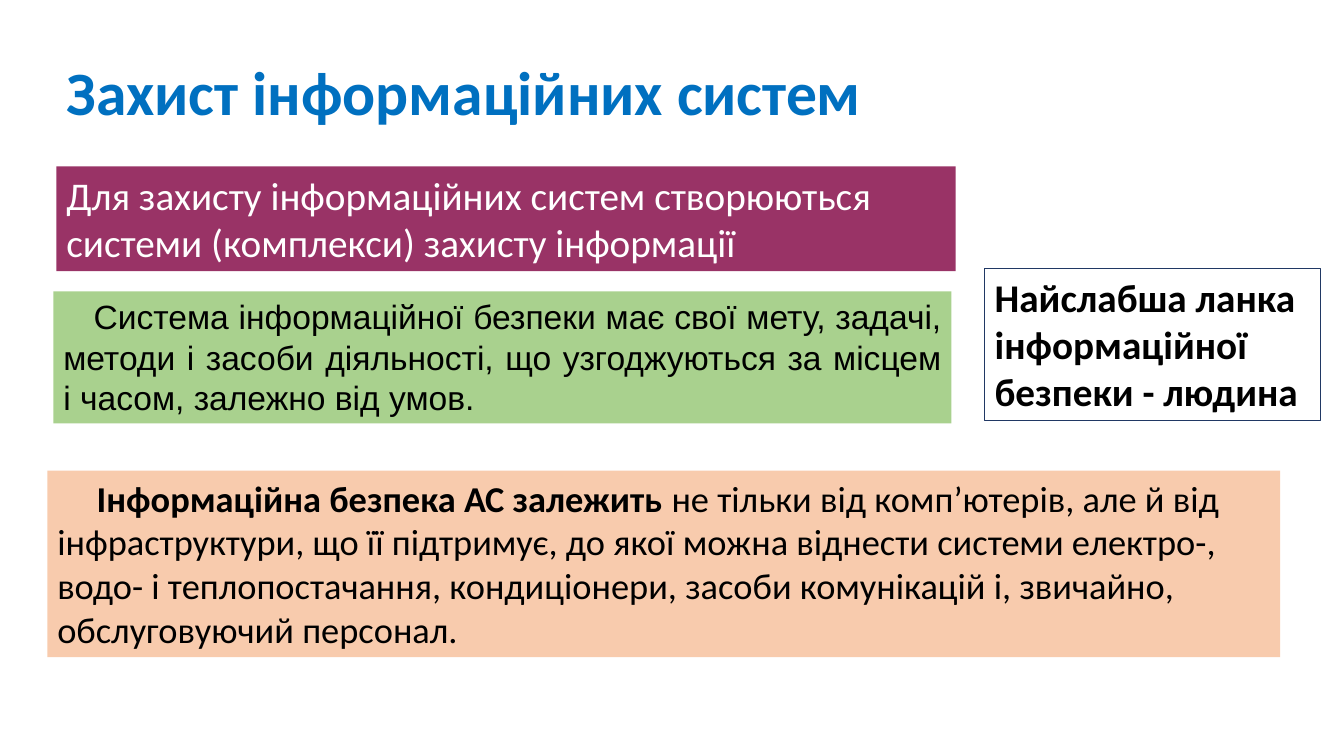
import pptx
import pptx.util
import pptx.dml.color
import pptx.enum.shapes
import pptx.enum.text
from dataclasses import dataclass

Pt = pptx.util.Pt
Align = pptx.enum.text.PP_ALIGN
Anchor = pptx.enum.text.MSO_ANCHOR
Fit = pptx.enum.text.MSO_AUTO_SIZE


@dataclass(frozen=True)
class Theme:
    font: str = "Calibri"
    alt: str = "Arial"
    blue: str = "0070C0"
    navy: str = "203864"
    plum: str = "993366"
    green: str = "A9D18E"
    peach: str = "F8CBAD"
    black: str = "000000"
    white: str = "FFFFFF"
    head: int = 44
    large: int = 28
    body: int = 26
    small: int = 24


theme = Theme()
title = "Захист інформаційних систем"
title_at = (40.32, 17.28, 850.32, 78.48)

boxes = [
    dict(at=(703.44, 191.52, 239.76, 108.72), line=theme.navy, size=theme.large,
         runs=[("Найслабша ланка інформаційної безпеки - людина", True)]),
    dict(at=(33.84, 336.24, 880.56, 133.2), fill=theme.peach, size=theme.body, indent=28.08,
         runs=[("Інформаційна безпека АС залежить ", True),
               ("не тільки від комп’ютерів, але й від інфраструктури, що її підтримує, "
                "до якої можна віднести системи електро-, водо- і теплопостачання, "
                "кондиціонери, засоби комунікацій і, звичайно, обслуговуючий персонал.", False)]),
    dict(at=(40.32, 118.8, 642.24, 74.88), fill=theme.plum, size=theme.large, color=theme.white,
         runs=[("Для захисту інформаційних систем створюються "
                "системи (комплекси) захисту інформації", False)]),
    dict(at=(38.16, 208.08, 641.52, 94.32), fill=theme.green, size=theme.small,
         font=theme.alt, align=Align.JUSTIFY, indent=21.6,
         runs=[("Система інформаційної безпеки має свої мету, задачі, методи і засоби "
                "діяльності, що узгоджуються за місцем і часом, залежно від умов.", False)]),
]


def rgb(code):
    return pptx.dml.color.RGBColor.from_string(code)


def style(run, size, color, bold, font=theme.font):
    run.font.name = font
    run.font.size = Pt(size)
    run.font.bold = bold
    run.font.color.rgb = rgb(color)


def add_head(slide):
    head = slide.shapes.title
    head.left, head.top, head.width, head.height = map(Pt, title_at)
    frame = head.text_frame
    frame.text = title
    frame.word_wrap = True
    frame.auto_size = Fit.NONE
    frame.vertical_anchor = Anchor.BOTTOM
    para = frame.paragraphs[0]
    para.alignment = Align.LEFT
    para.line_spacing = 0.9
    style(para.runs[0], theme.head, theme.blue, True)


def add_box(slide, at, runs, size, fill=None, line=None, color=theme.black,
            font=theme.font, align=Align.LEFT, indent=0):
    kind = pptx.enum.shapes.MSO_SHAPE.RECTANGLE
    box = slide.shapes.add_shape(kind, *map(Pt, at))
    box.shadow.inherit = False
    if fill:
        box.fill.solid()
        box.fill.fore_color.rgb = rgb(fill)
    else:
        box.fill.background()
    if line:
        box.line.color.rgb = rgb(line)
        box.line.width = Pt(0.75)
    else:
        box.line.fill.background()
    frame = box.text_frame
    frame.word_wrap = True
    frame.auto_size = Fit.SHAPE_TO_FIT_TEXT
    frame.vertical_anchor = Anchor.TOP
    para = frame.paragraphs[0]
    para.alignment = align
    if indent:
        para._p.get_or_add_pPr().set("indent", str(Pt(indent)))
    for text, bold in runs:
        run = para.add_run()
        run.text = text
        style(run, size, color, bold, font)


def main():
    deck = pptx.Presentation()
    deck.slide_width, deck.slide_height = Pt(960), Pt(540)
    slide = deck.slides.add_slide(deck.slide_layouts.get_by_name("Title Only"))
    add_head(slide)
    for box in boxes:
        add_box(slide, **box)
    deck.save("out.pptx")


if __name__ == "__main__":
    main()
